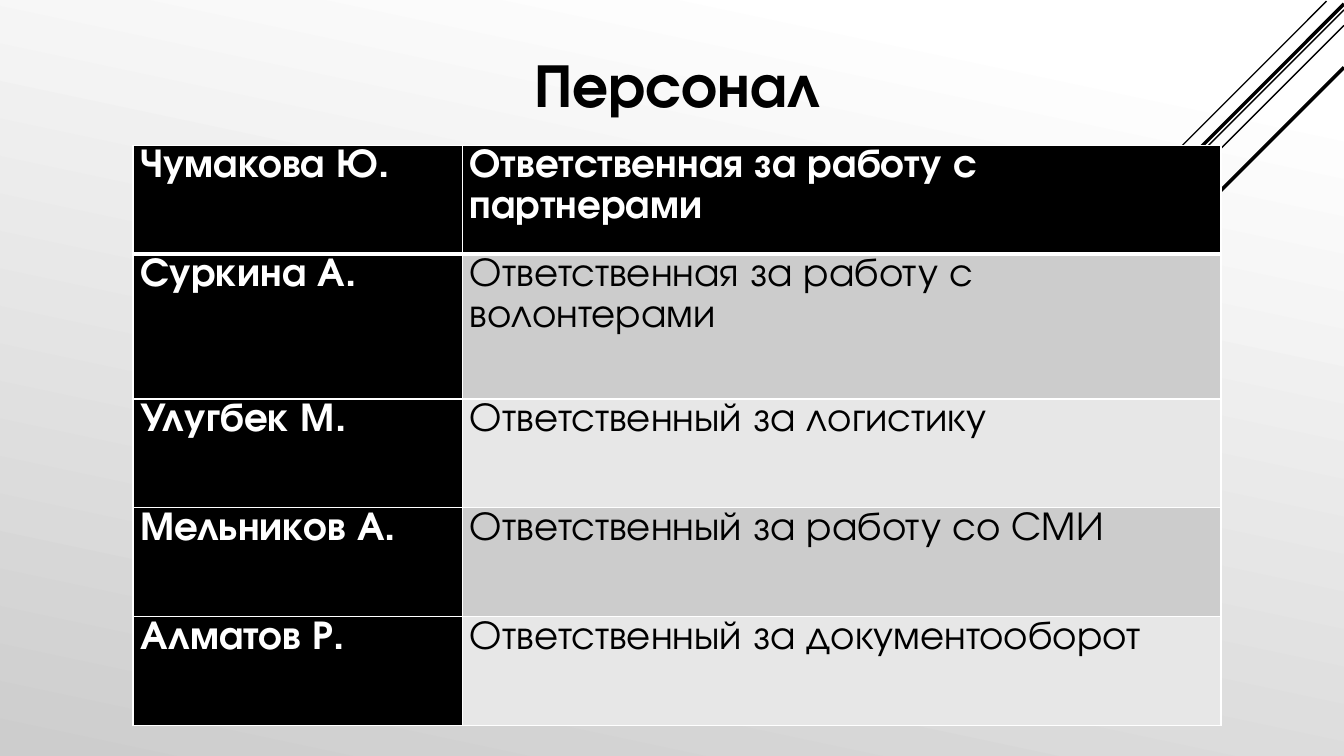
from dataclasses import dataclass

from lxml.etree import SubElement
from pptx import Presentation
from pptx.dml.color import RGBColor as RGB
from pptx.enum.shapes import MSO_CONNECTOR as CONN
from pptx.enum.text import MSO_ANCHOR as ANCHOR, MSO_AUTO_SIZE as AUTOSIZE, PP_ALIGN as ALIGN
from pptx.oxml.ns import qn
from pptx.util import Cm, Pt


@dataclass(frozen=True)
class Theme:
    font: str = "TeX Gyre Adventor"
    black: str = "000000"
    white: str = "FFFFFF"
    shade: str = "CDCDCD"
    bands: tuple = ("CCCCCC", "E7E7E7")
    title_size: float = 44
    table_size: float = 29
    line_spacing: float = 1.07
    thin: float = 1
    thick: float = 2.5
    header_rule: float = 3


THEME = Theme()
SLIDE_W, SLIDE_H = 33.87, 19.05
TITLE_BOX = (12.78, 1.02, 8.58, 2.13)
TABLE_BOX = (3.35, 3.66, 27.42, 14.62)
NAME_SHARE = 0.303
ROW_UNITS = (3, 4, 3, 3, 3)
CELL_INSET = 0.18

STAFF = [
    ("Чумакова Ю.", "Ответственная за работу с партнерами"),
    ("Суркина А.", "Ответственная за работу с волонтерами"),
    ("Улугбек М.", "Ответственный за логистику"),
    ("Мельников А.", "Ответственный за работу со СМИ"),
    ("Алматов Р.", "Ответственный за документооборот"),
]

# fmt: off
RAYS = [
    (0.44, 0.03, 10.57, THEME.thin),
    (0, 0.25, 16.89, THEME.thin),
    (0, 0.64, 13.77, THEME.thin),
    (0, 0.1, 13.46, THEME.thick),
    (0, 1.7, 12.07, THEME.thick),
]
# fmt: on


def add_run(p, text, size, color, bold):
    r = p.add_run()
    r.text = text
    r.font.name = THEME.font
    r.font.size = Pt(size)
    r.font.bold = bold
    r.font.color.rgb = RGB.from_string(color)


def paint_background(slide):
    fill = slide.background.fill
    fill.gradient()
    fill.gradient_angle = 258
    stops = ((0.1, THEME.white), (1, THEME.shade))
    for stop, (position, color) in zip(fill.gradient_stops, stops):
        stop.position = position
        stop.color.rgb = RGB.from_string(color)


def add_rays(slide, box):
    left, top, width, _ = box
    for inset, drop, run, weight in RAYS:
        x, y = left + width - inset, top + drop
        ray = slide.shapes.add_connector(
            CONN.STRAIGHT, Cm(x), Cm(y), Cm(x - run), Cm(y + run))
        ray.line.color.rgb = RGB.from_string(THEME.black)
        ray.line.width = Pt(weight)
        SubElement(ray._element.spPr, qn("a:effectLst"))


def add_title(slide, box, text):
    title = slide.shapes.title
    title.left, title.top, title.width, title.height = map(Cm, box)
    tf = title.text_frame
    tf.word_wrap = False
    tf.auto_size = AUTOSIZE.SHAPE_TO_FIT_TEXT
    tf.vertical_anchor = ANCHOR.MIDDLE
    p = tf.paragraphs[0]
    p.alignment = ALIGN.CENTER
    add_run(p, text, THEME.title_size, THEME.black, True)


def set_borders(cell, top, bottom):
    tc_pr = cell._tc.get_or_add_tcPr()
    widths = {"L": THEME.thin, "R": THEME.thin, "T": top, "B": bottom}
    for side, width in widths.items():
        ln = SubElement(tc_pr, qn(f"a:ln{side}"), w=str(Pt(width)))
        fill = SubElement(ln, qn("a:solidFill"))
        SubElement(fill, qn("a:srgbClr"), val=THEME.white)


def fill_cell(cell, row, text, dark):
    set_borders(cell,
                THEME.header_rule if row == 1 else THEME.thin,
                THEME.header_rule if row == 0 else THEME.thin)
    color = THEME.black if dark else THEME.bands[(row - 1) % 2]
    cell.fill.solid()
    cell.fill.fore_color.rgb = RGB.from_string(color)
    cell.margin_left = cell.margin_right = Cm(CELL_INSET)
    cell.margin_top = cell.margin_bottom = 0
    p = cell.text_frame.paragraphs[0]
    p.line_spacing = THEME.line_spacing
    add_run(p, text, THEME.table_size, THEME.white if dark else THEME.black, dark)


def add_staff_table(slide, box, staff):
    width, height = box[2:]
    table = slide.shapes.add_table(len(staff), 2, *map(Cm, box)).table
    table.horz_banding = False
    for column, share in zip(table.columns, (NAME_SHARE, 1 - NAME_SHARE)):
        column.width = Cm(width * share)
    for row, units in zip(table.rows, ROW_UNITS):
        row.height = Cm(height * units / sum(ROW_UNITS))
    for i, person in enumerate(staff):
        for j, text in enumerate(person):
            fill_cell(table.cell(i, j), i, text, dark=i == 0 or j == 0)


def build_staff_slide(prs):
    slide = prs.slides.add_slide(prs.slide_layouts[5])
    paint_background(slide)
    add_rays(slide, (0, 0, SLIDE_W, SLIDE_H))
    add_title(slide, TITLE_BOX, "Персонал")
    add_staff_table(slide, TABLE_BOX, STAFF)


def main():
    prs = Presentation()
    prs.slide_width, prs.slide_height = Cm(SLIDE_W), Cm(SLIDE_H)
    build_staff_slide(prs)
    prs.save("out.pptx")


if __name__ == "__main__":
    main()
